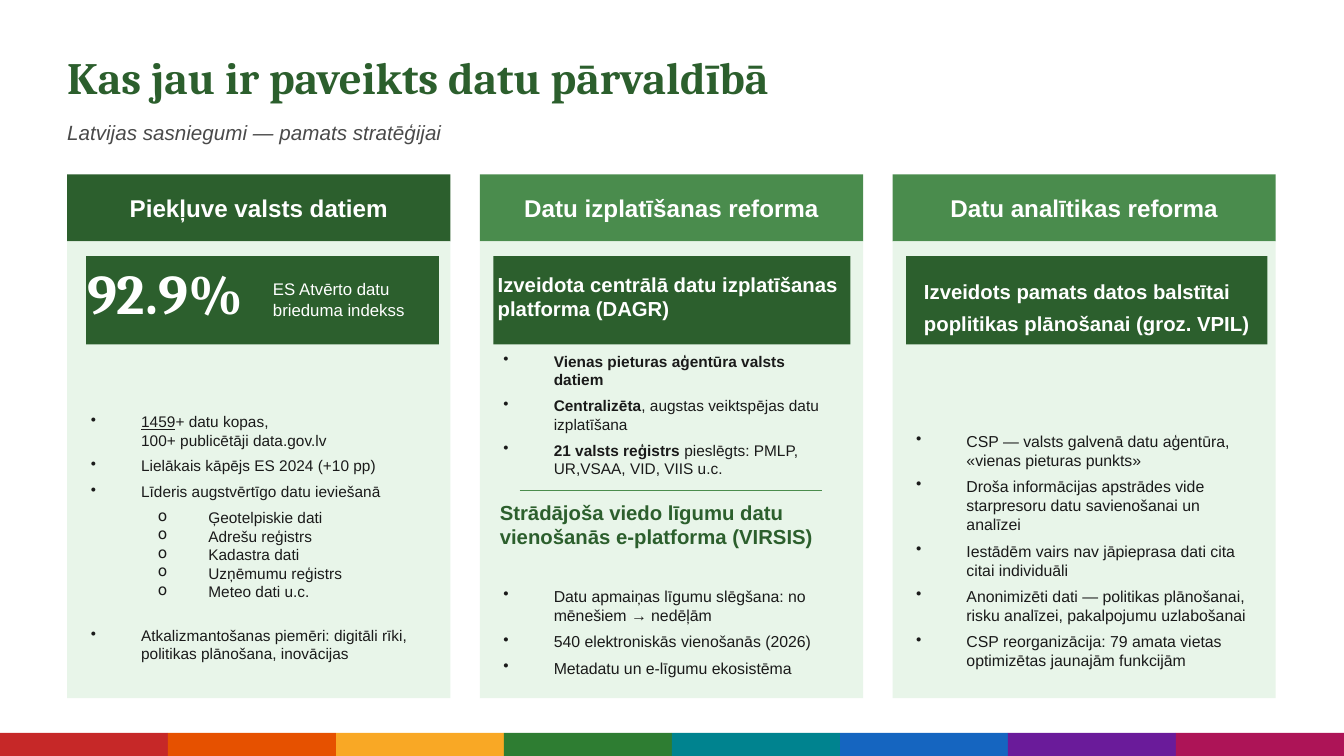
from lxml import etree
from pptx import Presentation
from pptx import util as u
from pptx.dml.color import RGBColor
from pptx.enum import shapes, text
from pptx.oxml.ns import qn

PX = 9525
C = {"dark": "2C5F2D", "green": "4A8C4D", "pale": "E8F5E9", "white": "FFFFFF",
     "ink": "1A1A1A", "grey": "4A4A4A"}
STRIPES = ["C62828", "E65100", "F9A825", "2E7D32", "00838F", "1565C0", "6A1B9A", "AD1457"]
HEAD_H = 64

ACCESS_TOP = [
    [("1459", "u"), ("+ datu kopas,", ""), ("\n", ""), ("100+ publicētāji data.gov.lv", "")],
    "Lielākais kāpējs ES 2024 (+10 pp)",
    "Līderis augstvērtīgo datu ieviešanā",
]
ACCESS_SETS = ["Ģeotelpiskie dati", "Adrešu reģistrs", "Kadastra dati",
               "Uzņēmumu reģistrs", "Meteo dati u.c."]
ACCESS_END = "Atkalizmantošanas piemēri: digitāli rīki, politikas plānošana, inovācijas"
PLATFORM = [
    [("Vienas pieturas aģentūra valsts datiem", "b")],
    [("Centralizēta", "b"), (", augstas veiktspējas datu izplatīšana", "")],
    [("21 valsts reģistrs ", "b"), ("pieslēgts: PMLP, UR,VSAA, VID, VIIS u.c.", "")],
]
CONTRACTS = [
    "Datu apmaiņas līgumu slēgšana: no mēnešiem → nedēļām",
    "540 elektroniskās vienošanās (2026)",
    "Metadatu un e-līgumu ekosistēma",
]
ANALYTICS = [
    "CSP — valsts galvenā datu aģentūra, «vienas pieturas punkts»",
    "Droša informācijas apstrādes vide starpresoru datu savienošanai un analīzei",
    "Iestādēm vairs nav jāpieprasa dati cita citai individuāli",
    "Anonimizēti dati — politikas plānošanai, risku analīzei, pakalpojumu uzlabošanai",
    "CSP reorganizācija: 79 amata vietas optimizētas jaunajām funkcijām",
]


def rgb(name):
    return RGBColor.from_string(C.get(name, name))


def px(*lengths):
    return [u.Emu(n * PX) for n in lengths]


def style(r, size, color, name="Arial", bold=False, italic=False):
    r.font.size = u.Pt(size)
    r.font.name = name
    r.font.bold = bold
    r.font.italic = italic
    r.font.color.rgb = rgb(color)


def add_rect(s, x, y, w, h, fill):
    sp = s.shapes.add_shape(shapes.MSO_SHAPE.RECTANGLE, *px(x, y, w, h))
    sp.shadow.inherit = False
    sp.fill.solid()
    sp.fill.fore_color.rgb = rgb(fill)
    sp.line.fill.background()
    return sp


def add_frame(s, x, y, w, h):
    tf = s.shapes.add_textbox(*px(x, y, w, h)).text_frame
    tf.word_wrap = True
    tf.vertical_anchor = text.MSO_ANCHOR.MIDDLE
    return tf


def add_label(s, x, y, w, h, words, size, color, spacing=None, **font):
    tf = add_frame(s, x, y, w, h)
    tf.margin_left = tf.margin_right = tf.margin_top = tf.margin_bottom = 0
    tf.text = words
    p = tf.paragraphs[0]
    if spacing:
        p.line_spacing = spacing
    style(p.runs[0], size, color, **font)


def add_bullet(tf, item, size, level=0, before=0, after=5.3):
    """Add one bulleted paragraph; item is a string or a list of (words, mark) runs."""
    p = tf.paragraphs[0]
    if p.runs:
        p = tf.add_paragraph()
    p.level = level
    pPr = p._p.get_or_add_pPr()
    pPr.set("marL", str((48, 112)[level] * PX))
    pPr.set("indent", str(-48 * PX))
    etree.SubElement(pPr, qn("a:buChar")).set("char", "•o"[level])
    if before:
        p.space_before = u.Pt(before)
    p.space_after = u.Pt(after)
    for words, mark in [(item, "")] if isinstance(item, str) else item:
        if words == "\n":
            p.add_line_break()
            continue
        r = p.add_run()
        r.text = words
        style(r, size, "ink", bold=mark == "b")
        if mark == "u":
            r.font.underline = True


def add_bullets(s, x, y, w, h, items, size):
    tf = add_frame(s, x, y, w, h)
    for item in items:
        add_bullet(tf, item, size)
    return tf


def add_column(s, x, y, w, h, heading, fill):
    """Draw the heading band and the pale panel below it."""
    sp = add_rect(s, x, y, w, HEAD_H, fill)
    tf = sp.text_frame
    tf.text = heading
    tf.vertical_anchor = text.MSO_ANCHOR.MIDDLE
    tf.paragraphs[0].alignment = text.PP_ALIGN.CENTER
    style(tf.paragraphs[0].runs[0], 17.3, "white", bold=True)
    add_rect(s, x, y + HEAD_H, w, h - HEAD_H, "pale")


def access_column(s, x, y, w, h):
    add_column(s, x, y, w, h, "Piekļuve valsts datiem", "dark")
    add_rect(s, x + 18, y + 78, 336, 84, "dark")
    add_label(s, x + 19, y + 77, 170, 70, "92.9%", 40, "white", name="Cambria", bold=True)
    add_label(s, x + 196, y + 100, 156, 38, "ES Atvērto datu brieduma indekss", 12, "white")
    tf = add_bullets(s, x + 13, y + 186, w - 26, 320, ACCESS_TOP, 11)
    for item in ACCESS_SETS:
        add_bullet(tf, item, 11, level=1, after=0)
    add_bullet(tf, ACCESS_END, 11, before=18)


def sharing_column(s, x, y, w, h):
    add_column(s, x, y, w, h, "Datu izplatīšanas reforma", "green")
    add_rect(s, x + 13, y + 78, 340, 84, "dark")
    add_label(s, x + 17, y + 90, 328, 52, "Izveidota centrālā datu izplatīšanas platforma (DAGR)",
              14.5, "white", bold=True)
    add_bullets(s, x + 13, y + 158, w - 26, 142, PLATFORM, 11)
    rule = s.shapes.add_connector(shapes.MSO_CONNECTOR.STRAIGHT,
                                  *px(x + 38, y + 301, x + 326, y + 301))
    rule.line.color.rgb = rgb("green")
    rule.line.width = u.Pt(0.5)
    etree.SubElement(rule._element.spPr, qn("a:effectLst"))
    add_label(s, x + 19, y + 308, 326, 51, "Strādājoša viedo līgumu datu vienošanās e-platforma (VIRSIS)",
              14.5, "dark", bold=True)
    add_bullets(s, x + 13, y + 359, w - 26, 154, CONTRACTS, 11.3)


def analytics_column(s, x, y, w, h):
    add_column(s, x, y, w, h, "Datu analītikas reforma", "green")
    add_rect(s, x + 13, y + 78, 344, 84, "dark")
    add_label(s, x + 30, y + 84, 326, 78,
              "Izveidots pamats datos balstītai poplitikas plānošanai (groz. VPIL)",
              14.5, "white", spacing=1.3, bold=True)
    add_bullets(s, x + 13, y + 211, w - 26, 295, ANALYTICS, 11.3)


def stripe_band(s, x, y, w, h):
    step = w // len(STRIPES)
    for i, color in enumerate(STRIPES):
        add_rect(s, x + i * step, y, step, h, color)


def title_block(s, x, y, w):
    add_label(s, x, y, w, 70, "Kas jau ir paveikts datu pārvaldībā", 32, "dark",
              name="Cambria", bold=True)
    add_label(s, x, y + 65, w, 45, "Latvijas sasniegumi — pamats stratēģijai", 14.7, "grey",
              italic=True)


def main():
    prs = Presentation()
    prs.slide_width, prs.slide_height = px(1280, 720)
    s = prs.slides.add_slide(prs.slide_layouts[6])
    stripe_band(s, 0, 698, 1280, 22)
    title_block(s, 64, 38, 960)
    for i, column in enumerate([access_column, sharing_column, analytics_column]):
        column(s, 64 + i * 393, 166, 365, 499)
    prs.save("out.pptx")


if __name__ == "__main__":
    main()
